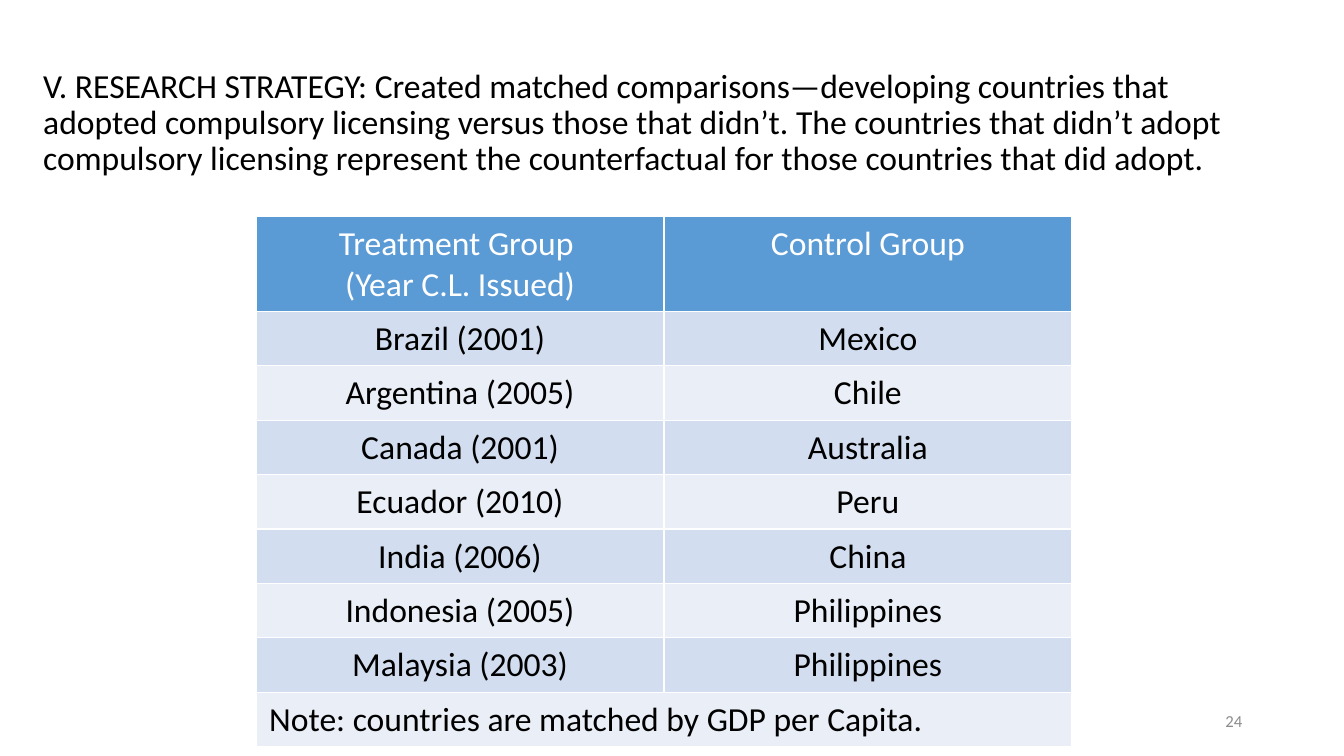
"""Build the research strategy slide with its matched-country table."""
from dataclasses import dataclass

from lxml import etree
from pptx import Presentation
from pptx.dml.color import RGBColor
from pptx.enum import text
from pptx.oxml import ns
from pptx.util import Inches, Pt


@dataclass(frozen=True)
class Theme:
    """Colours and type sizes of the slide."""
    font: str = "Calibri"
    body: int = 24
    small: int = 12
    black: str = "000000"
    white: str = "FFFFFF"
    grey: str = "8C8C8C"
    header: str = "5B9BD5"
    bands: tuple[str, str] = ("D2DEEF", "EAEFF7")
    border: int = 1


@dataclass(frozen=True)
class Label:
    """A text box with its place and style."""
    words: str
    left: float
    top: float
    width: float
    height: float
    size: int
    color: str
    align: text.PP_ALIGN
    spacing: float = 1.0


@dataclass(frozen=True)
class Match:
    """A treated country and its control."""
    treatment: str
    control: str


THEME = Theme()
CENTER = text.PP_ALIGN.CENTER
LEFT = text.PP_ALIGN.LEFT

LABELS = [
    Label("V. RESEARCH STRATEGY: Created matched comparisons—developing countries that "
          "adopted compulsory licensing versus those that didn’t. The countries that didn’t "
          "adopt compulsory licensing represent the counterfactual for those countries that "
          "did adopt.", 0.33, 0.4, 12.28, 1.65, THEME.body, THEME.black, LEFT, 0.9),
    Label("24", 9.42, 6.95, 3, 0.4, THEME.small, THEME.grey, text.PP_ALIGN.RIGHT),
]
HEADER = Match("Treatment Group \n(Year C.L. Issued)", "Control Group")
MATCHES = [
    Match("Brazil (2001)", "Mexico"),
    Match("Argentina (2005)", "Chile"),
    Match("Canada (2001)", "Australia"),
    Match("Ecuador (2010)", "Peru"),
    Match("India (2006)", "China"),
    Match("Indonesia (2005)", "Philippines"),
    Match("Malaysia (2003)", "Philippines"),
]
NOTE = "Note: countries are matched by GDP per Capita."


def write(tf, words: str, size: int, color: str, align: text.PP_ALIGN,
          spacing: float = 1.0) -> None:
    """Write each line of words as a paragraph with one run."""
    for i, line in enumerate(words.split("\n")):
        p = tf.add_paragraph() if i else tf.paragraphs[0]
        p.alignment = align
        p.line_spacing = spacing
        r = p.add_run()
        r.text = line
        r.font.name = THEME.font
        r.font.size = Pt(size)
        r.font.color.rgb = RGBColor.from_string(color)


def add_label(s, label: Label) -> None:
    """Add a wrapped, vertically centred text box."""
    sp = s.shapes.add_textbox(Inches(label.left), Inches(label.top),
                              Inches(label.width), Inches(label.height))
    tf = sp.text_frame
    tf.word_wrap = True
    tf.vertical_anchor = text.MSO_ANCHOR.MIDDLE
    write(tf, label.words, label.size, label.color, label.align, label.spacing)


def add_borders(cell) -> None:
    """Give a cell solid lines on all four sides."""
    tc_pr = cell._tc.get_or_add_tcPr()
    for i, side in enumerate(("lnL", "lnR", "lnT", "lnB")):
        ln = etree.Element(ns.qn(f"a:{side}"), w=str(Pt(THEME.border)))
        fill = etree.SubElement(ln, ns.qn("a:solidFill"))
        etree.SubElement(fill, ns.qn("a:srgbClr"), val=THEME.white)
        tc_pr.insert(i, ln)


def fill_cell(cell, words: str, fill: str, color: str, align: text.PP_ALIGN) -> None:
    """Style a table cell and write its words."""
    cell.fill.solid()
    cell.fill.fore_color.rgb = RGBColor.from_string(fill)
    cell.margin_left = cell.margin_right = Inches(0.13)
    cell.margin_top = cell.margin_bottom = Inches(0.07)
    add_borders(cell)
    if words:
        write(cell.text_frame, words, THEME.body, color, align)


def add_matches(s) -> None:
    """Add the table of matched countries."""
    rows = [HEADER, *MATCHES, Match(NOTE, "")]
    last = len(rows) - 1
    frame = s.shapes.add_table(len(rows), 2, Inches(2.54), Inches(2.15),
                               Inches(8.09), Inches(5.2))
    table = frame.table
    for i, match in enumerate(rows):
        table.rows[i].height = Inches(0.46 if i else 0.81)
        fill = THEME.bands[(i - 1) % 2] if i else THEME.header
        color = THEME.black if i else THEME.white
        align = LEFT if i == last else CENTER
        for j, words in enumerate((match.treatment, match.control)):
            fill_cell(table.cell(i, j), words, fill, color, align)
    table.cell(last, 0).merge(table.cell(last, 1))
    frame.height = Inches(5.2)


def main() -> None:
    """Build and save the presentation."""
    prs = Presentation()
    prs.slide_width, prs.slide_height = Inches(13.33), Inches(7.5)
    s = prs.slides.add_slide(prs.slide_layouts[6])
    title, number = LABELS
    add_label(s, title)
    add_matches(s)
    add_label(s, number)
    prs.save("out.pptx")


if __name__ == "__main__":
    main()
